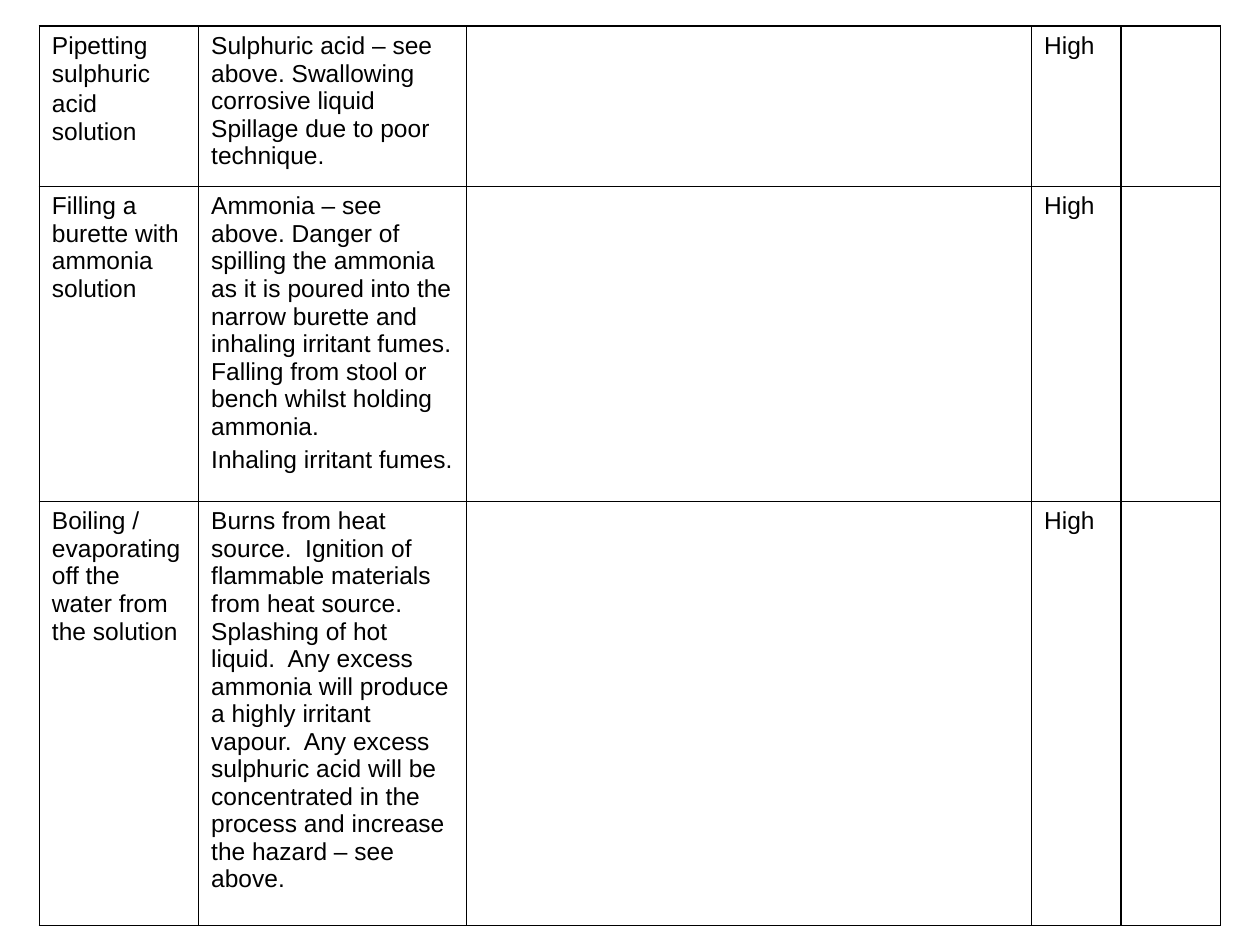
from dataclasses import dataclass

from lxml import etree
from pptx import Presentation
from pptx import util as u
from pptx.dml.color import RGBColor
from pptx.oxml import ns

INK = "000000"
PAPER = "FFFFFF"
FONT = "Arial"
TEXT_SIZE = 14
BORDER = u.Pt(1)
COLUMN_WIDTHS = (91, 153, 323, 51, 57)


@dataclass
class Span:
    text: str
    size: float


@dataclass
class Activity:
    """One row; a cell is a list of paragraphs, a paragraph a list of strings and spans."""
    height: float
    task: list
    hazards: list
    risk: str = "High"

    def cells(self) -> list:
        return [self.task, self.hazards, [], [[self.risk]], []]


ACTIVITIES = [
    Activity(
        91.5,
        [["Pipetting sulphuric acid", Span(" ", 16), "solution"]],
        [["Sulphuric acid – see above. Swallowing corrosive liquid "
          "Spillage due to poor technique."]],
    ),
    Activity(
        180,
        [["Filling a burette with ammonia solution"]],
        [["Ammonia – see above. Danger of spilling the ammonia as it is poured "
          "into the narrow burette and inhaling irritant fumes. Falling from "
          "stool or bench whilst holding ammonia."],
         ["Inhaling irritant fumes.", Span(" ", 18)]],
    ),
    Activity(
        242.5,
        [["Boiling / evaporating off the water from the solution"]],
        [["Burns from heat source.  Ignition of flammable materials from heat "
          "source.  Splashing of hot liquid.  Any excess ammonia will produce a "
          "highly irritant vapour.  Any excess sulphuric acid will be "
          "concentrated in the process and increase the hazard – see above."]],
    ),
]


def color(hex_value: str) -> RGBColor:
    return RGBColor.from_string(hex_value)


def draw_borders(cell) -> None:
    properties = cell._tc.get_or_add_tcPr()
    for side in ("a:lnL", "a:lnR", "a:lnT", "a:lnB"):
        line = etree.SubElement(properties, ns.qn(side), w=str(int(BORDER)))
        fill = etree.SubElement(line, ns.qn("a:solidFill"))
        etree.SubElement(fill, ns.qn("a:srgbClr"), val=INK)


def write_paragraph(paragraph, parts: list) -> None:
    paragraph.font.name = FONT
    paragraph.font.size = u.Pt(TEXT_SIZE)
    paragraph.font.color.rgb = color(INK)
    for part in parts:
        run = paragraph.add_run()
        if isinstance(part, Span):
            run.text = part.text
            run.font.size = u.Pt(part.size)
        else:
            run.text = part


def fill_cell(cell, paragraphs: list) -> None:
    draw_borders(cell)
    cell.fill.solid()
    cell.fill.fore_color.rgb = color(PAPER)
    frame = cell.text_frame
    for index, parts in enumerate(paragraphs):
        paragraph = frame.add_paragraph() if index else frame.paragraphs[0]
        write_paragraph(paragraph, parts)


def add_risk_table(slide, activities: list[Activity]) -> None:
    table = slide.shapes.add_table(
        len(activities), len(COLUMN_WIDTHS), u.Pt(22.5), u.Pt(15),
        u.Pt(sum(COLUMN_WIDTHS)), u.Pt(sum(a.height for a in activities)),
    ).table
    table.first_row = False
    table.horz_banding = False
    for column, width in zip(table.columns, COLUMN_WIDTHS):
        column.width = u.Pt(width)
    for row, activity in zip(table.rows, activities):
        row.height = u.Pt(activity.height)
        for cell, paragraphs in zip(row.cells, activity.cells()):
            fill_cell(cell, paragraphs)


def main() -> None:
    deck = Presentation()
    deck.slide_width, deck.slide_height = u.Pt(720), u.Pt(540)
    slide = deck.slides.add_slide(deck.slide_layouts[6])
    add_risk_table(slide, ACTIVITIES)
    deck.save("out.pptx")


if __name__ == "__main__":
    main()
